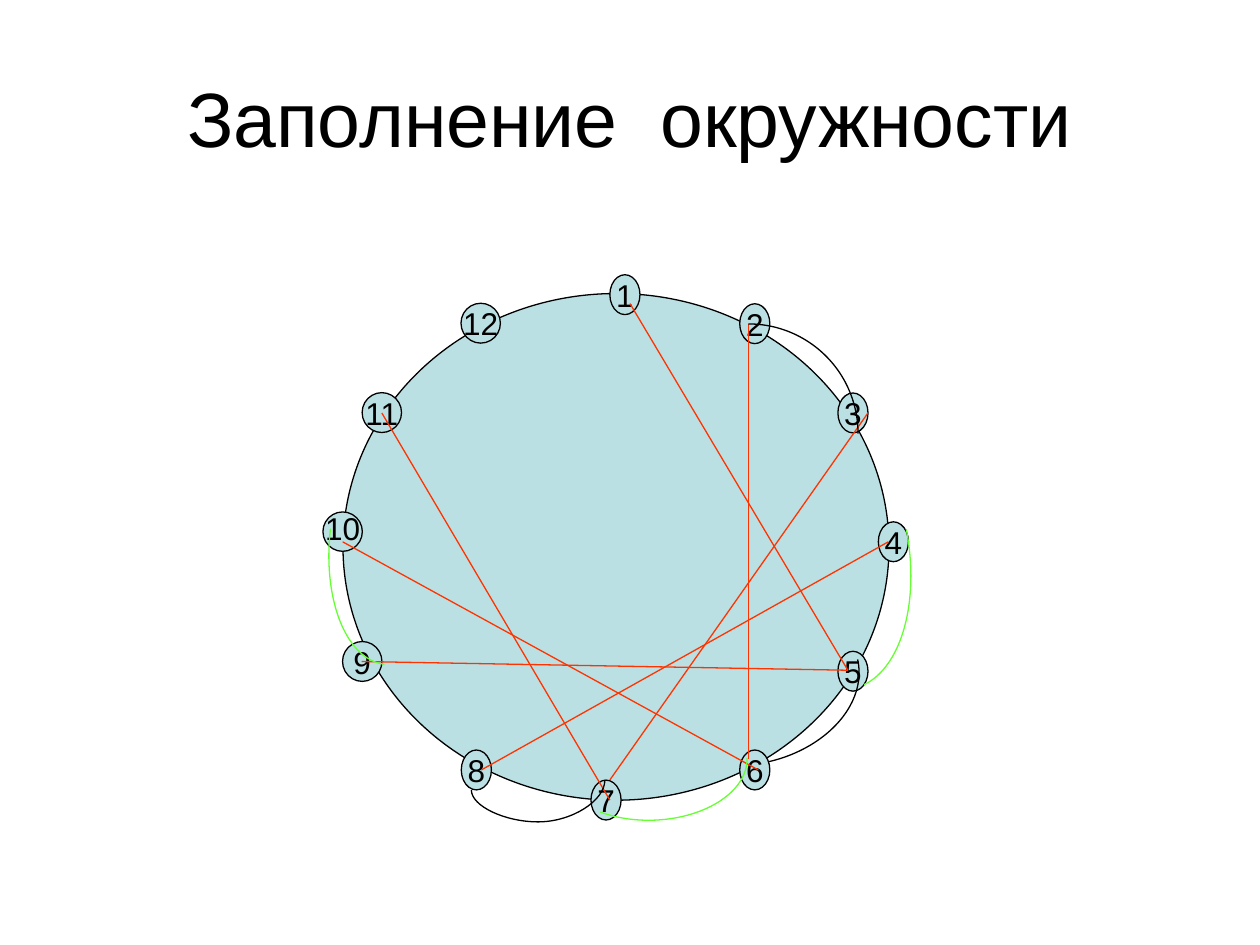
from lxml import etree
from pptx import Presentation
from pptx.dml.color import RGBColor
from pptx.enum.shapes import MSO_CONNECTOR, MSO_SHAPE
from pptx.enum.text import MSO_ANCHOR, PP_ALIGN
from pptx.oxml.ns import qn
from pptx.util import Pt

NODE = MSO_SHAPE.FLOWCHART_CONNECTOR
ARC = MSO_SHAPE.ARC
LINE, CURVE = MSO_CONNECTOR.STRAIGHT, MSO_CONNECTOR.CURVE
MID, CENTER = MSO_ANCHOR.MIDDLE, PP_ALIGN.CENTER

HUES = {"ink": "000000", "disc": "BBE0E3", "red": "FF3300", "green": "66FF33"}
TITLE = "Заполнение  окружности"
DISC = (352, 312.5, 312, 289.5)  # centre x, centre y, width, height
WIDE, SLIM = 22.5, 17.2
TALL = 22.8

# label, centre x, centre y, width
NODES = [
    ("12", 274.7, 184.7, WIDE), ("7", 346.3, 457.2, SLIM),
    ("9", 207, 378, WIDE), ("8", 272.2, 440, SLIM),
    ("6", 431.3, 440, SLIM), ("11", 218.2, 235.8, WIDE),
    ("5", 487.4, 383.6, SLIM), ("3", 487.4, 236, SLIM),
    ("4", 510.5, 309.6, SLIM), ("1", 357.1, 168.4, SLIM),
    ("2", 431.3, 185, SLIM),
]
TEN = (195.8, 303.8)
TEN_LIFT = 2  # the label of node 10 sits a little above its centre

CHORDS = [
    (360, 173.5, 484.5, 383), (427.7, 434, 427.7, 185),
    (496, 236, 348.5, 445.7), (275, 440, 507.6, 309.6),
    (484.5, 383, 206.6, 378), (195.8, 309.6, 433.4, 440),
    (348.5, 457.2, 218.2, 236),
]
# hue, centre x, centre y, x radius, y radius, turn, start and end degrees
ARCS = [
    ("ink", 429.1, 391, 62.6, 45.4, 166.9, 180, 270),
    ("ink", 427.7, 247.7, 62.6, 62.6, 0, 270, 0),
    ("green", 473, 313.2, 46.1, 81.4, 170.2, 176.2, 264.9),
    ("green", 228.2, 306.7, 39.6, 73.4, 6.7, 90, 180),
    ("green", 372.2, 434.9, 54.7, 33.8, 178.3, 180, 316.7),
]
BEND = (304.6, 410.4, 310.4, 486.7)  # box of the 7-8 curve before its turn
BEND_TURN, BEND_DEPTH = 90, 4.13


def tint(hue):
    return RGBColor.from_string(HUES[hue])


def ink(item, hue):
    item.line.color.rgb = tint(hue)
    item.line.width = Pt(0.75)


def write(frame, text, size=18, font="Arial", hue="ink", wrap=False):
    frame.word_wrap = wrap
    frame.vertical_anchor = MID
    frame.margin_left = frame.margin_right = 0
    frame.margin_top = frame.margin_bottom = 0
    para = frame.paragraphs[0]
    para.alignment = CENTER
    run = para.add_run()
    run.text = text
    run.font.size, run.font.name = Pt(size), font
    run.font.color.rgb = tint(hue)


def place(x, y, wide, tall):
    """Turn a centre and a size into left, top, width and height."""
    return [Pt(v) for v in (x - wide / 2, y - tall / 2, wide, tall)]


def shape(kind, box, hue="ink", fill=None):
    item = slide.shapes.add_shape(kind, *place(*box))
    item.shadow.inherit = False
    if fill:
        item.fill.solid()
        item.fill.fore_color.rgb = tint(fill)
    else:
        item.fill.background()
    ink(item, hue)
    return item


def link(kind, ends, hue):
    item = slide.shapes.add_connector(kind, *[Pt(v) for v in ends])
    ink(item, hue)
    etree.SubElement(item._element.spPr, qn("a:effectLst"))
    return item


deck = Presentation()
deck.slide_width, deck.slide_height = Pt(720), Pt(540)
slide = deck.slides.add_slide(deck.slide_layouts[6])

head = slide.shapes.add_textbox(Pt(36), Pt(21.6), Pt(648), Pt(90))
write(head.text_frame, TITLE, size=44, wrap=True)

shape(NODE, DISC, fill="disc")
shape(NODE, (*TEN, WIDE, WIDE), fill="disc")
ten = slide.shapes.add_textbox(*place(TEN[0], TEN[1] - TEN_LIFT, 34, 28))
write(ten.text_frame, "10")
for label, x, y, wide in NODES:
    node = shape(NODE, (x, y, wide, TALL), fill="disc")
    write(node.text_frame, label)

for ends in CHORDS:
    link(LINE, ends, "red")

for hue, x, y, rx, ry, turn, start, end in ARCS:
    arc = shape(ARC, (x, y, 2 * rx, 2 * ry), hue)
    arc.rotation = turn
    # an angle is stored in 1/60000 degree, an adjustment in 1/100000
    arc.adjustments[0], arc.adjustments[1] = start * 0.6, end * 0.6

bend = link(CURVE, BEND, "ink")
props = bend._element.spPr
props.find(qn("a:xfrm")).set("rot", str(BEND_TURN * 60000))
geom = props.find(qn("a:prstGeom"))
marks = geom.find(qn("a:avLst"))
if marks is None:
    marks = etree.SubElement(geom, qn("a:avLst"))
etree.SubElement(marks, qn("a:gd"), name="adj1",
                 fmla=f"val {round(BEND_DEPTH * 100000)}")

deck.save("out.pptx")
